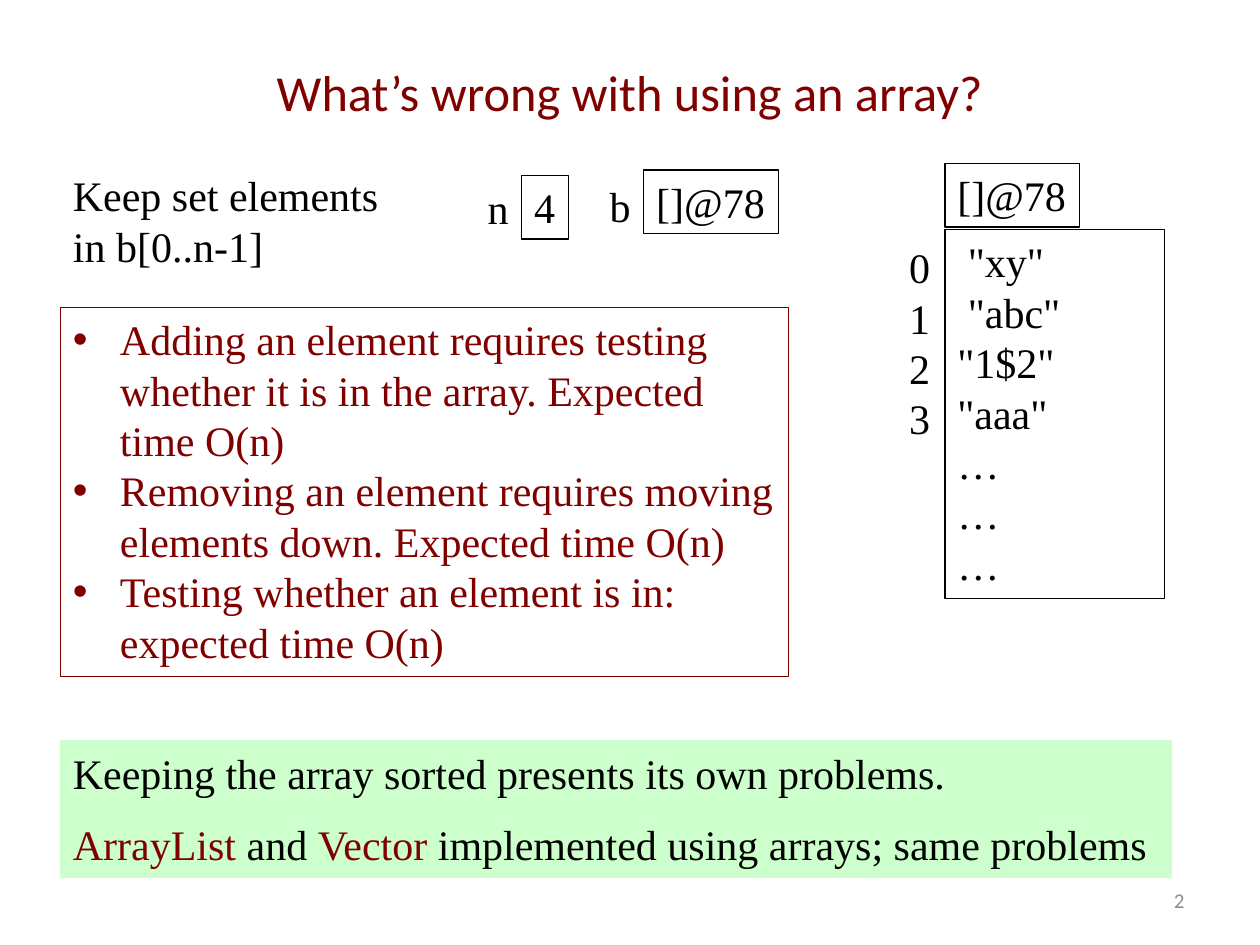
from dataclasses import dataclass

from lxml.etree import Element
from pptx import Presentation
from pptx.dml.color import RGBColor
from pptx.enum.text import MSO_ANCHOR, MSO_AUTO_SIZE, PP_ALIGN
from pptx.oxml.ns import qn
from pptx.util import Cm, Pt


@dataclass(frozen=True)
class Theme:
    heading_font: str = "Calibri"
    body_font: str = "Times New Roman"
    title_size: float = 28.8
    body_size: float = 24
    number_size: float = 12
    ink: RGBColor = RGBColor(0, 0, 0)
    accent: RGBColor = RGBColor(0x80, 0, 0)
    panel: RGBColor = RGBColor(0xCC, 0xFF, 0xCC)
    muted: RGBColor = RGBColor(0x8C, 0x8C, 0x8C)


THEME = Theme()
LEFT = 1.22
ARRAY_LEFT = 19.05
CELL_HEIGHT = 1.28


def style(paragraph, color=THEME.ink, font=THEME.body_font, size=THEME.body_size):
    paragraph.font.name = font
    paragraph.font.size = Pt(size)
    paragraph.font.color.rgb = color


def add_text(slide, box, lines, color=THEME.ink, outline=None, wrap=True):
    """Add body text, one paragraph a line; box is left, top, width, height in cm."""
    text_box = slide.shapes.add_textbox(*map(Cm, box))
    if outline is not None:
        text_box.line.color.rgb = outline
        text_box.line.width = Pt(0.75)
    frame = text_box.text_frame
    frame.word_wrap = wrap
    frame.auto_size = MSO_AUTO_SIZE.SHAPE_TO_FIT_TEXT
    frame.text = "\n".join(lines)
    for paragraph in frame.paragraphs:
        style(paragraph, color)
    return text_box


def add_heading_text(slide, box, text, size, color, align):
    """Add a line in the heading font, centred vertically in its box."""
    frame = slide.shapes.add_textbox(*map(Cm, box)).text_frame
    frame.word_wrap = True
    frame.vertical_anchor = MSO_ANCHOR.MIDDLE
    frame.text = text
    frame.paragraphs[0].alignment = align
    style(frame.paragraphs[0], color, THEME.heading_font, size)


def add_bullet(paragraph):
    properties = paragraph._p.get_or_add_pPr()
    properties.set("marL", str(Cm(0.95)))
    properties.set("indent", str(-Cm(0.95)))
    font = Element(qn("a:buFont"), typeface="Arial")
    mark = Element(qn("a:buChar"), char="•")
    properties.insert(0, font)
    properties.insert(1, mark)


def add_variable(slide, name, value, left, top, value_top, value_width):
    """Add a variable's name with its boxed value on the right."""
    name_width = 0.94
    add_text(slide, (left, top, name_width, CELL_HEIGHT), [name], wrap=False)
    add_text(slide, (left + name_width, value_top, value_width, CELL_HEIGHT),
             [value], outline=THEME.ink, wrap=False)


def add_array(slide, reference, elements, indexed):
    add_text(slide, (ARRAY_LEFT, 3.3, 2.72, CELL_HEIGHT), [reference],
             outline=THEME.ink, wrap=False)
    add_text(slide, (ARRAY_LEFT, 4.63, 4.42, 7.44), elements, outline=THEME.ink)
    add_text(slide, (18.08, 4.75, 1.96, 5.38), [str(i) for i in range(indexed)])


def add_problems(slide, problems):
    problem_list = add_text(slide, (LEFT, 6.2, 14.68, 7.44), problems,
                            THEME.accent, outline=THEME.accent)
    for paragraph in problem_list.text_frame.paragraphs:
        add_bullet(paragraph)


def add_conclusion(slide):
    panel = add_text(slide, (LEFT, 14.94, 22.4, 2.74),
                     ["Keeping the array sorted presents its own problems."],
                     outline=THEME.panel, wrap=False)
    panel.fill.solid()
    panel.fill.fore_color.rgb = THEME.panel
    remark = panel.text_frame.add_paragraph()
    remark.space_before = Pt(12)
    style(remark)
    for text, color in (("ArrayList ", THEME.accent), ("and ", THEME.ink),
                        ("Vector", THEME.accent),
                        (" implemented using arrays; same problems", THEME.ink)):
        run = remark.add_run()
        run.text = text
        run.font.color.rgb = color


def main():
    deck = Presentation()
    deck.slide_width, deck.slide_height = Cm(25.4), Cm(19.05)
    slide = deck.slides.add_slide(deck.slide_layouts[6])

    add_heading_text(slide, (1.9, 1.04, 21.6, 1.6), "What’s wrong with using an array?",
                     THEME.title_size, THEME.accent, PP_ALIGN.CENTER)
    add_text(slide, (LEFT, 3.3, 7.06, 2.31), ["Keep set elements in b[0..n-1]"])
    add_variable(slide, "n", "4", 9.58, 3.56, 3.54, 0.94)
    add_variable(slide, "b", "[]@78", 12.04, 3.51, 3.43, 2.72)
    add_array(slide, "[]@78",
              [' "xy"', ' "abc"', '"1$2"', '"aaa"', "…", "…", "…"], indexed=4)
    add_problems(slide, [
        "Adding an element requires testing whether it is in the array. Expected time O(n)",
        "Removing an element requires moving elements down. Expected time O(n)",
        "Testing whether an element is in: expected time O(n)",
    ])
    add_conclusion(slide)
    add_heading_text(slide, (18.2, 17.65, 5.93, 1.01), "2",
                     THEME.number_size, THEME.muted, PP_ALIGN.RIGHT)
    deck.save("out.pptx")


if __name__ == "__main__":
    main()
